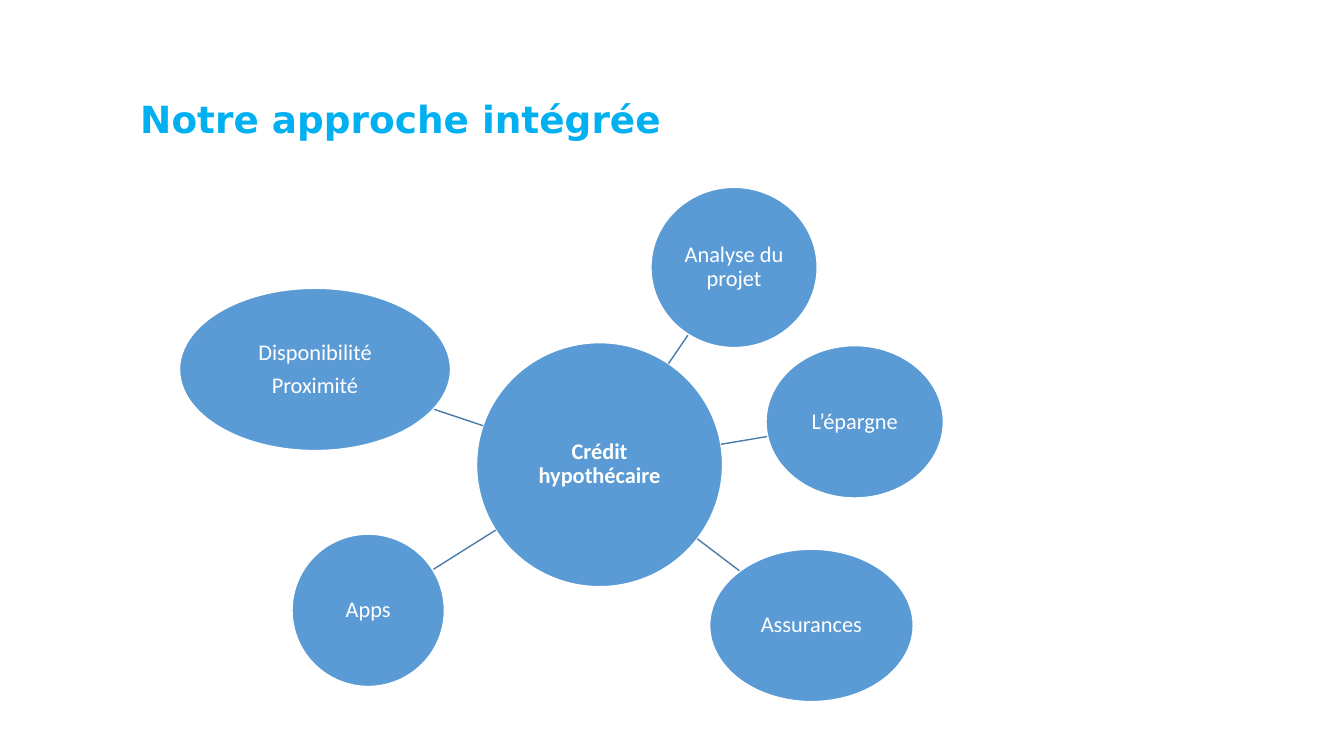
import math

import pptx
import pptx.dml.color
import pptx.enum.shapes
import pptx.enum.text
import pptx.oxml.ns
import pptx.util
from lxml import etree
from pptx.util import Cm, Pt

# Content: lines, centre x, centre y, width, height (cm)
TITLE = "Notre approche intégrée"
HUB = (["Crédit hypothécaire"], 15.11, 11.71, 6.2, 6.15)
SATELLITES = [
    (["Analyse du projet"], 18.5, 6.74, 4.19, 4.04),
    (["L’épargne"], 21.54, 10.63, 4.47, 3.84),
    (["Assurances"], 20.45, 15.76, 5.13, 3.84),
    (["Apps"], 9.28, 15.38, 3.84, 3.84),
    (["Disponibilité", "Proximité"], 7.94, 9.31, 6.83, 4.09),
]
COLOURS = {"title": "00B0F0", "bubble": "5B9BD5", "spoke": "497CAB", "white": "FFFFFF"}


def colour(name):
    return pptx.dml.color.RGBColor.from_string(COLOURS[name])


def add_span(para, text, font, size, shade, bold):
    span = para.add_run()
    span.text = text
    span.font.name = font
    span.font.size = Pt(size)
    span.font.bold = bold
    span.font.color.rgb = colour(shade)


def add_bubble(page, bubble, bold=False):
    lines, x, y, width, height = bubble
    oval = page.shapes.add_shape(
        pptx.enum.shapes.MSO_SHAPE.OVAL,
        Cm(x - width / 2), Cm(y - height / 2), Cm(width), Cm(height))
    oval.shadow.inherit = False
    oval.fill.solid()
    oval.fill.fore_color.rgb = colour("bubble")
    oval.line.color.rgb = colour("white")
    oval.line.width = Pt(1)
    frame = oval.text_frame
    frame.word_wrap = True
    frame.vertical_anchor = pptx.enum.text.MSO_ANCHOR.MIDDLE
    frame.margin_left = frame.margin_right = Cm(0.03)
    frame.margin_top = frame.margin_bottom = Cm(0.03)
    for index, line in enumerate(lines):
        para = frame.add_paragraph() if index else frame.paragraphs[0]
        para.alignment = pptx.enum.text.PP_ALIGN.CENTER
        para.line_spacing = 0.9
        if index < len(lines) - 1:
            para.space_after = Pt(6.5)
        add_span(para, line, "Calibri", 16, "white", bold)


def edge_point(bubble, target):
    """Point on the bubble's outline facing the centre of the target."""
    _, x, y, width, height = bubble
    dx, dy = target[1] - x, target[2] - y
    scale = 1 / math.hypot(dx / (width / 2), dy / (height / 2))
    return Cm(x + dx * scale), Cm(y + dy * scale)


def add_spoke(page, satellite):
    spoke = page.shapes.add_connector(
        pptx.enum.shapes.MSO_CONNECTOR.STRAIGHT,
        *edge_point(HUB, satellite), *edge_point(satellite, HUB))
    spoke.line.color.rgb = colour("spoke")
    spoke.line.width = Pt(1)
    etree.SubElement(spoke.element.spPr, pptx.oxml.ns.qn("a:effectLst"))


def main():
    deck = pptx.Presentation()
    deck.slide_width, deck.slide_height = Cm(33.87), Cm(19.05)
    page = deck.slides.add_slide(deck.slide_layouts[5])

    # Title
    title = page.shapes.title
    title.left, title.top, title.width, title.height = Cm(3.28), Cm(2.06), Cm(30.48), Cm(2)
    title.text_frame.vertical_anchor = pptx.enum.text.MSO_ANCHOR.MIDDLE
    para = title.text_frame.paragraphs[0]
    para.alignment = pptx.enum.text.PP_ALIGN.LEFT
    para.line_spacing = 0.9
    add_span(para, TITLE, "DejaVu Sans", 26.7, "title", True)

    # Hub, then each spoke with its satellite
    add_bubble(page, HUB, bold=True)
    for satellite in SATELLITES:
        add_spoke(page, satellite)
        add_bubble(page, satellite)

    deck.save("out.pptx")


if __name__ == "__main__":
    main()
